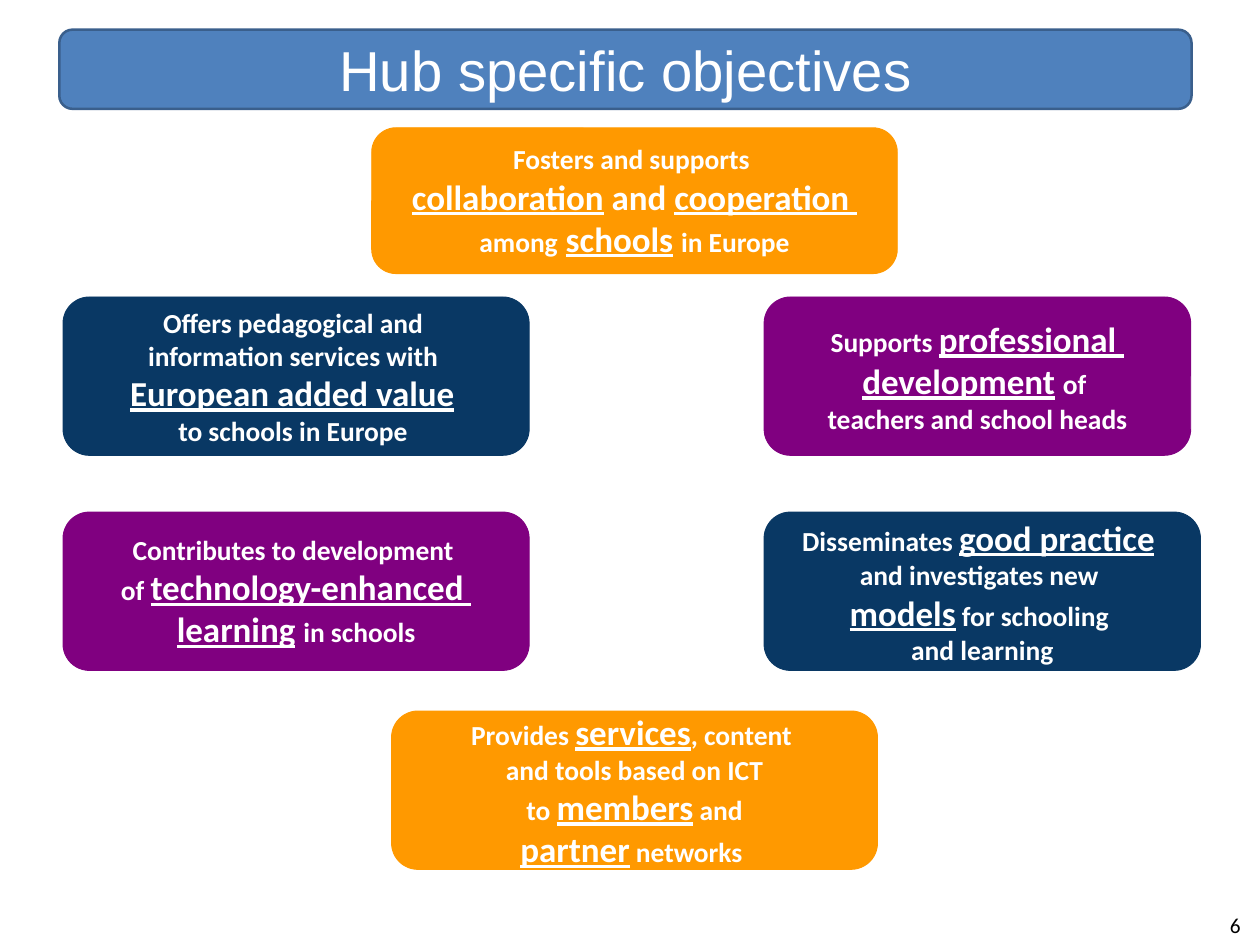
from dataclasses import dataclass

from pptx import Presentation
from pptx.dml.color import RGBColor
from pptx.enum.shapes import MSO_SHAPE
from pptx.enum.text import MSO_ANCHOR, PP_ALIGN
from pptx.util import Inches, Pt

ROUNDED = MSO_SHAPE.ROUNDED_RECTANGLE
MIDDLE = MSO_ANCHOR.MIDDLE
CENTER = PP_ALIGN.CENTER
WIDTH, HEIGHT = 14, 10.5


@dataclass(frozen=True)
class Theme:
    orange: str = "FF9900"
    navy: str = "093864"
    purple: str = "800080"
    title_fill: str = "4F81BD"
    title_line: str = "3A5F8C"
    light: str = "FFFFFF"
    dark: str = "000000"
    title_font: str = "Arial"
    body_font: str = "Calibri"
    title_size: int = 45
    key_size: int = 28
    body_size: int = 22
    number_size: int = 17


THEME = Theme()

# Percent of the slide's width and height
LEFT, RIGHT, MID = 5, 60.64, 50.36
ROWS = (13.52, 31.43, 54.19, 75.24)
BOX_H = 16.76

# One string per paragraph, its runs parted by "|".
# "*" opens an underlined key term, "+" a plain run of the same size.
FOSTERS = ["Fosters and supports ",
           "*collaboration|+ and |*cooperation ",
           "among|+ |*schools|+ |in Europe"]
OFFERS = ["Offers pedagogical and ", "information services with ",
          "*European added value|+ \n|to schools in Europe "]
SUPPORTS = ["Supports |*professional ", "*development|+ |of ",
            "teachers and school heads"]
CONTRIBUTES = ["Contributes to development ", "of |*technology-enhanced ",
               "*learning|+ |in schools"]
DISSEMINATES = ["Disseminates |*good practice|+ \n|and investigates new \n"
                "|*models| for schooling \nand learning"]
PROVIDES = ["Provides |*services|, content ", "and tools based on ICT",
            " to |*members| and \n|*partner| networks "]


def place(left, top, width, height):
    """Turn percentages of the slide into lengths."""
    return (Inches(left * WIDTH / 100), Inches(top * HEIGHT / 100),
            Inches(width * WIDTH / 100), Inches(height * HEIGHT / 100))


def add_run(p, text, size, font, color, bold, underline):
    for i, line in enumerate(text.split("\n")):
        if i:
            p.add_line_break()
        if line:
            r = p.add_run()
            r.text = line
            r.font.size = Pt(size)
            r.font.name = font
            r.font.bold = bold
            r.font.underline = underline
            r.font.color.rgb = RGBColor.from_string(color)


def write(sp, paragraphs, *, size=THEME.body_size, font=THEME.body_font,
          color=THEME.light, bold=False, wrap=True):
    tf = sp.text_frame
    tf.word_wrap = wrap
    tf.vertical_anchor = MIDDLE
    tf.margin_left = tf.margin_right = Inches(0.14)
    tf.margin_top = tf.margin_bottom = Inches(0.07)
    for i, paragraph in enumerate(paragraphs):
        p = tf.add_paragraph() if i else tf.paragraphs[0]
        p.alignment = CENTER
        for piece in paragraph.split("|"):
            large = piece.startswith(("*", "+"))
            add_run(p, piece[1:] if large else piece,
                    THEME.key_size if large else size,
                    font, color, bold, piece.startswith("*"))


def add_panel(s, box, fill, line, line_width):
    sp = s.shapes.add_shape(ROUNDED, *place(*box))
    sp.shadow.inherit = False
    sp.fill.solid()
    sp.fill.fore_color.rgb = RGBColor.from_string(fill)
    sp.line.color.rgb = RGBColor.from_string(line)
    sp.line.width = Pt(line_width)
    return sp


def add_objective(s, left, top, width, fill, paragraphs, height=BOX_H):
    sp = add_panel(s, (left, top, width, height), fill, fill, 0.75)
    write(sp, paragraphs, bold=True, wrap=False)


def add_title(s, text):
    sp = add_panel(s, (4.71, 3.14, 89.86, 8.38),
                   THEME.title_fill, THEME.title_line, 2)
    write(sp, [text], size=THEME.title_size, font=THEME.title_font)


def add_page_number(s, number):
    sp = s.shapes.add_textbox(*place(96.07, 95.81, 3.93, 4.19))
    write(sp, [str(number)], size=THEME.number_size, color=THEME.dark)


def main():
    prs = Presentation()
    prs.slide_width, prs.slide_height = Inches(WIDTH), Inches(HEIGHT)
    s = prs.slides.add_slide(prs.slide_layouts[6])
    add_page_number(s, 6)

    for left, row, width, fill, paragraphs in (
            (LEFT, 2, 37, THEME.purple, CONTRIBUTES),
            (RIGHT, 2, 34.64, THEME.navy, DISSEMINATES),
            (MID - 38.57 / 2, 3, 38.57, THEME.orange, PROVIDES),
            (LEFT, 1, 37, THEME.navy, OFFERS),
            (RIGHT, 1, 33.86, THEME.purple, SUPPORTS)):
        add_objective(s, left, ROWS[row], width, fill, paragraphs)
    add_objective(s, MID - 41.71 / 2, ROWS[0], 41.71, THEME.orange, FOSTERS,
                  height=15.43)

    add_title(s, "Hub specific objectives")
    prs.save("out.pptx")


if __name__ == "__main__":
    main()
